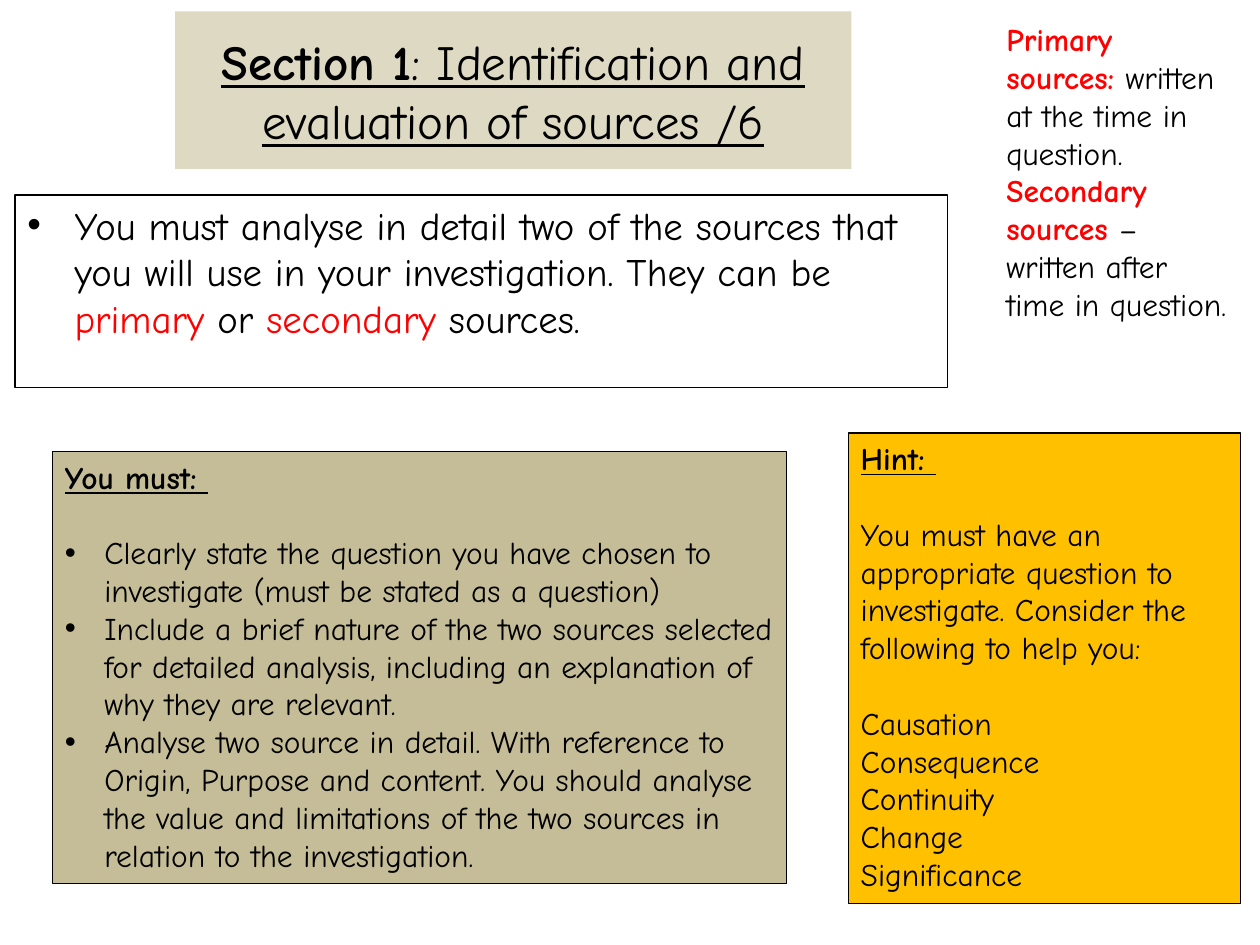
from dataclasses import dataclass

from lxml import etree
from pptx import Presentation
from pptx import util as u
from pptx.dml.color import RGBColor
from pptx.enum import text
from pptx.oxml.ns import qn

FONT = "Comic Neue"
COLORS = {
    "black": "000000",
    "red": "FF0000",
    "sand": "DDD9C3",
    "khaki": "C4BD97",
    "amber": "FFC000",
}
BLANK_LINE = 21.6


@dataclass
class Run:
    text: str
    color: str = "black"
    bold: bool = False
    underline: bool = False


@dataclass
class Para:
    runs: list[Run]
    indent: float = 0
    before: float = 0


@dataclass
class Box:
    left: float
    top: float
    width: float
    height: float
    paras: list[Para]
    size: float = 18
    fill: str | None = None
    outlined: bool = True
    grow: bool = True


def plain(content: str, indent: float = 0, before: float = 0) -> Para:
    return Para([Run(content)], indent, before)


def heading(content: str) -> Para:
    return Para([Run(content, bold=True, underline=True)])


def rgb(name: str) -> RGBColor:
    return RGBColor.from_string(COLORS[name])


def add_bullet(p, indent: float) -> None:
    pPr = p._p.get_or_add_pPr()
    pPr.set("marL", str(u.Pt(indent)))
    pPr.set("indent", str(-u.Pt(indent)))
    etree.SubElement(pPr, qn("a:buFont")).set("typeface", "Arial")
    etree.SubElement(pPr, qn("a:buChar")).set("char", "•")


def write_paras(tf, paras: list[Para], size: float) -> None:
    for i, para in enumerate(paras):
        p = tf.paragraphs[0] if i == 0 else tf.add_paragraph()
        p.space_before = u.Pt(para.before)
        if para.indent:
            add_bullet(p, para.indent)
        for run in para.runs:
            r = p.add_run()
            r.text = run.text
            r.font.name = FONT
            r.font.size = u.Pt(size)
            r.font.bold = run.bold
            r.font.underline = run.underline
            r.font.color.rgb = rgb(run.color)


def fill_box(sp, box: Box) -> None:
    sp.left, sp.top = u.Pt(box.left), u.Pt(box.top)
    sp.width, sp.height = u.Pt(box.width), u.Pt(box.height)
    if box.fill:
        sp.fill.solid()
        sp.fill.fore_color.rgb = rgb(box.fill)
    if box.outlined:
        sp.line.color.rgb = rgb("black")
        sp.line.width = u.Pt(0.75)
    tf = sp.text_frame
    tf.word_wrap = True
    sizing = text.MSO_AUTO_SIZE
    tf.auto_size = sizing.SHAPE_TO_FIT_TEXT if box.grow else sizing.NONE
    write_paras(tf, box.paras, box.size)


TITLE = Box(100, 6.5, 386.5, 90, [Para([
    Run("Section 1", bold=True, underline=True),
    Run(": Identification and evaluation of sources /6", underline=True),
])], size=28, fill="sand", outlined=False, grow=False)

TASK = Box(8.5, 111.5, 533, 110, [Para([
    Run("You must analyse in detail two of the sources that you will use "
        "in your investigation. They can be "),
    Run("primary", "red"),
    Run(" or "),
    Run("secondary", "red"),
    Run(" sources."),
], indent=27)], size=22.2, grow=False)

STEPS = [
    "Clearly state the question you have chosen to investigate "
    "(must be stated as a question)",
    "Include a brief nature of the two sources selected for detailed "
    "analysis, including an explanation of why they are relevant.",
    "Analyse two source in detail. With reference to Origin, Purpose and "
    "content. You should analyse the value and limitations of the two "
    "sources in relation to the investigation.",
]
REQUIREMENTS = Box(30, 258, 419.5, 247, [heading("You must: ")] + [
    plain(step, 22.5, 0 if i else BLANK_LINE) for i, step in enumerate(STEPS)
], fill="khaki")

CONCEPTS = ["Causation", "Consequence", "Continuity", "Change", "Significance"]
HINT = Box(484.75, 247.5, 224, 269, [
    heading("Hint: "),
    plain("You must have an appropriate question to investigate. "
          "Consider the following to help you:", before=BLANK_LINE),
] + [
    plain(concept, before=0 if i else BLANK_LINE)
    for i, concept in enumerate(CONCEPTS)
], fill="amber")

DEFINITIONS = Box(568, 8, 141, 247, [
    Para([Run("Primary sources: ", "red", True),
          Run("written at the time in question.")]),
    Para([Run("Secondary sources ", "red", True),
          Run("– written after time in question.")]),
], outlined=False)


def main() -> None:
    prs = Presentation()
    prs.slide_width, prs.slide_height = u.Pt(720), u.Pt(540)
    s = prs.slides.add_slide(prs.slide_layouts[5])
    title = s.shapes.title
    fill_box(title, TITLE)
    title.text_frame.vertical_anchor = text.MSO_ANCHOR.MIDDLE
    title.text_frame.paragraphs[0].alignment = text.PP_ALIGN.CENTER
    for box in (TASK, REQUIREMENTS, HINT, DEFINITIONS):
        fill_box(s.shapes.add_textbox(0, 0, 0, 0), box)
    prs.save("out.pptx")


if __name__ == "__main__":
    main()
